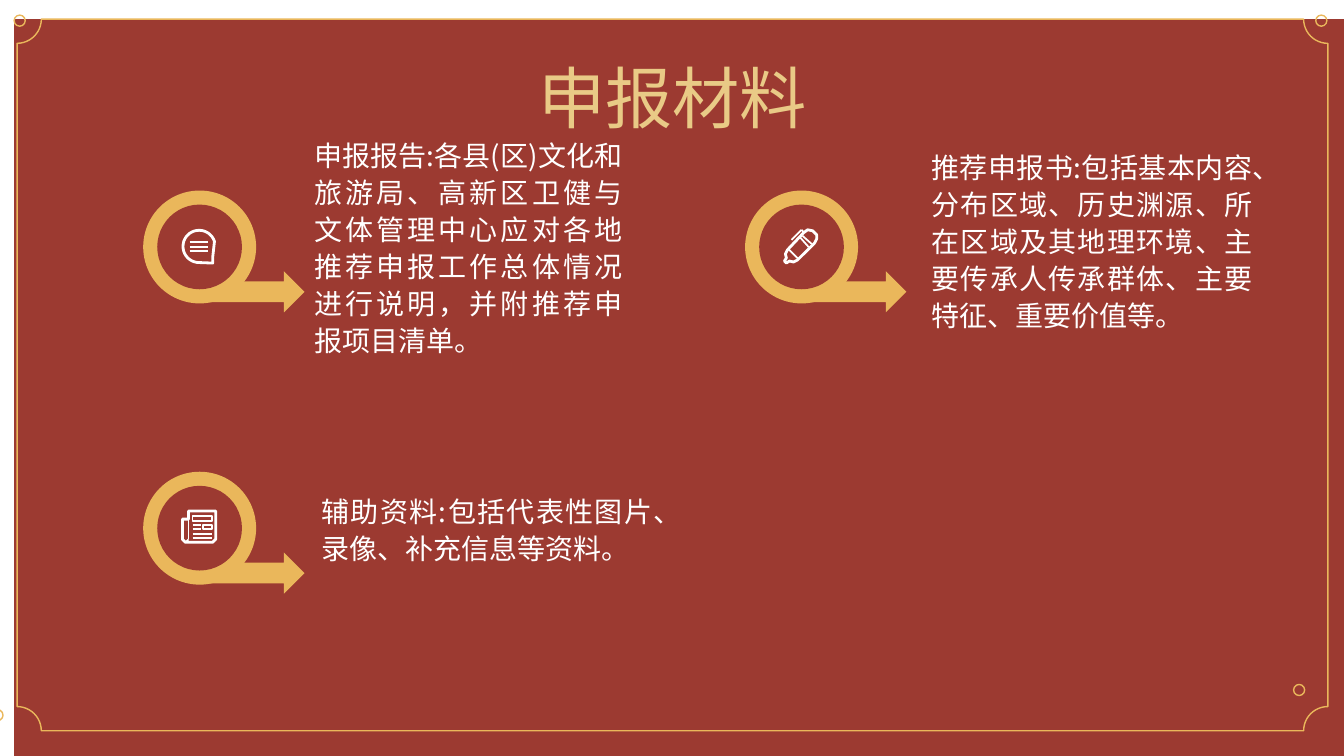
from math import cos, pi, sin
from lxml import etree
from pptx import Presentation
from pptx.dml.color import RGBColor
from pptx.enum.shapes import MSO_CONNECTOR, MSO_SHAPE
from pptx.enum.text import MSO_AUTO_SIZE, PP_ALIGN
from pptx.oxml.ns import qn
from pptx.util import Pt

PX = 9144
FONT = "Noto Sans CJK SC"
COLORS = {"red": "9C3A31", "gold": "EAB75B", "title": "E9CA86", "white": "FFFFFF"}
RECT, OVAL = MSO_SHAPE.RECTANGLE, MSO_SHAPE.OVAL
PLAQUE, ARROW = MSO_SHAPE.PLAQUE, MSO_SHAPE.RIGHT_ARROW
LINE = MSO_CONNECTOR.STRAIGHT
CENTER, JUSTIFY = PP_ALIGN.CENTER, PP_ALIGN.JUSTIFY
FIT = MSO_AUTO_SIZE.SHAPE_TO_FIT_TEXT

TITLE = ("申报材料", (473, 51, 388, 91))
DOTS = [(14, 15), (1305, 15), (-8, 704), (1283, 679)]

ARC = [(17.5 + 16 * cos(pi * (0.5 + k / 20)), 17.5 + 16 * sin(pi * (0.5 + k / 20)))
       for k in range(29)]
CHAT = {
    "bold": [ARC + [(31, 28), (31, 34)]],
    "thin": [],
    "rules": [(8, y, 26, y) for y in (13, 18, 22)],
}
PEN = {
    "bold": [[(20, 4), (24, 1), (29, 2), (33, 6), (33, 10), (31, 14), (14, 31),
              (10, 33), (6, 32), (3, 34), (1, 32), (3, 29), (2, 25), (4, 21)]],
    "thin": [],
    "rules": [(19, 7, 28, 15), (17, 9, 25, 18), (5, 20, 15, 30),
              (20, 3, 18, 1), (18, 1, 8, 11)],
}
NEWS = {
    "bold": [[(7, 1), (34, 1), (34, 29), (31, 32), (4, 32), (1, 29), (1, 9), (7, 9)]],
    "thin": [[(11, 6), (30, 6), (30, 11), (11, 11)],
             [(21, 15), (30, 15), (30, 19), (21, 19)]],
    "rules": [(7, 9, 7, 29), (7, 29, 4, 32), (11, 15, 19, 15), (11, 19, 19, 19),
              (11, 24, 30, 24), (11, 28, 30, 28)],
}
ITEMS = [
    ((142, 189), CHAT, (302, 129, 325, 232),
     "申报报告:各县(区)文化和旅游局、高新区卫健与文体管理中心应对各地推荐申报工作总体情况进行说明，并附推荐申报项目清单。"),
    ((739, 189), PEN, (914, 141, 338, 195),
     "推荐申报书:包括基本内容、分布区域、历史渊源、所在区域及其地理环境、主要传承人传承群体、主要特征、重要价值等。"),
    ((142, 468), NEWS, (309, 482, 349, 84),
     "辅助资料:包括代表性图片、录像、补充信息等资料。"),
]


def emu(box):
    return [round(v * PX) for v in box]


def rgb(name):
    return RGBColor.from_string(COLORS[name])


def paint(shape, fill=None, line=None, width=1):
    shape.shadow.inherit = False
    if fill:
        shape.fill.solid()
        shape.fill.fore_color.rgb = rgb(fill)
    else:
        shape.fill.background()
    if line:
        shape.line.color.rgb = rgb(line)
        shape.line.width = Pt(width)
    else:
        shape.line.fill.background()


def add(kind, box, fill=None, line=None):
    shape = slide.shapes.add_shape(kind, *emu(box))
    paint(shape, fill, line)
    return shape


def write(text, box, size, color, align, space=None):
    frame = slide.shapes.add_textbox(*emu(box)).text_frame
    frame.word_wrap = True
    frame.auto_size = FIT
    para = frame.paragraphs[0]
    para.alignment = align
    if space:
        para.line_spacing = space
    run = para.add_run()
    run.text = text
    run.font.size = Pt(size)
    run.font.name = FONT
    run.font.color.rgb = rgb(color)
    east = etree.SubElement(run.font._element, qn("a:ea"))
    east.set("typeface", FONT)


def trace(points, left, top, width):
    spots = [emu((left + x, top + y)) for x, y in points]
    pen = slide.shapes.build_freeform(*spots[0], scale=1.0)
    pen.add_line_segments(spots[1:], close=True)
    paint(pen.convert_to_shape(), line="white", width=width)


def icon(parts, left, top):
    for key, width in (("bold", 2), ("thin", 1.25)):
        for points in parts[key]:
            trace(points, left, top, width)
    for x1, y1, x2, y2 in parts["rules"]:
        ends = emu((left + x1, top + y1, left + x2, top + y2))
        rule = slide.shapes.add_connector(LINE, *ends)
        rule.line.color.rgb = rgb("white")
        rule.line.width = Pt(1.25)
        etree.SubElement(rule._element.spPr, qn("a:effectLst"))


deck = Presentation()
deck.slide_width, deck.slide_height = emu((1333, 750))
slide = deck.slides.add_slide(deck.slide_layouts[6])

add(RECT, (14, 19, 1333, 750), "red")
frame = add(PLAQUE, (17, 19, 1300, 706), line="gold")
frame.adjustments[0] = 0.034
for x, y in DOTS:
    add(OVAL, (x, y, 11, 11), line="gold")

write(*TITLE, 48, "title", CENTER)
for (x, y), parts, box, text in ITEMS:
    write(text, box, 20, "white", JUSTIFY, 1.1)
    add(ARROW, (x + 48, y + 80, 112, 41), "gold")
    add(OVAL, (x, y, 112, 112), "gold")
    add(OVAL, (x + 14, y + 14, 84, 84), "red")
    icon(parts, x + 38, y + 38)

deck.save("out.pptx")
